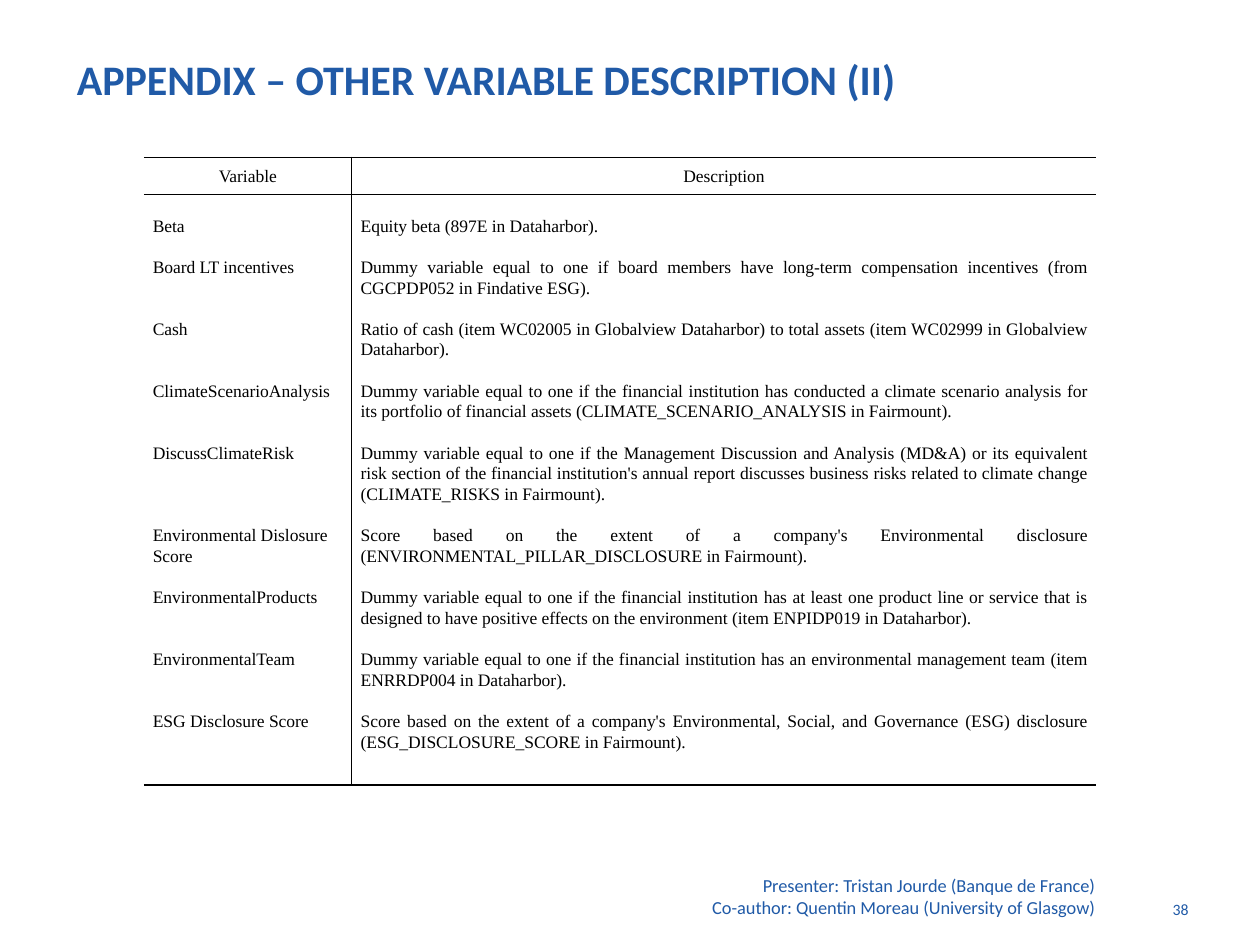
"""Build the appendix slide that describes the remaining variables."""
from lxml import etree
from pptx import Presentation
from pptx.dml.color import RGBColor
from pptx.enum.text import MSO_ANCHOR, PP_ALIGN
from pptx.oxml.ns import qn
from pptx.util import Cm, Pt

LEFT, CENTER, RIGHT, JUSTIFY = PP_ALIGN.LEFT, PP_ALIGN.CENTER, PP_ALIGN.RIGHT, PP_ALIGN.JUSTIFY
TOP, MIDDLE = MSO_ANCHOR.TOP, MSO_ANCHOR.MIDDLE
BLUE, BLACK = "205AA7", "000000"
LINE = 11.8

# name, lines of the name, description, lines of the description
VARIABLES = [
    ("Beta", 1, "Equity beta (897E in Dataharbor).", 1),
    ("Board LT incentives", 1,
     "Dummy variable equal to one if board members have long-term compensation incentives "
     "(from CGCPDP052 in Findative ESG).", 2),
    ("Cash", 1,
     "Ratio of cash (item WC02005 in Globalview Dataharbor) to total assets "
     "(item WC02999 in Globalview Dataharbor).", 2),
    ("ClimateScenarioAnalysis", 1,
     "Dummy variable equal to one if the financial institution has conducted a climate scenario "
     "analysis for its portfolio of financial assets (CLIMATE_SCENARIO_ANALYSIS in Fairmount).", 2),
    ("DiscussClimateRisk", 1,
     "Dummy variable equal to one if the Management Discussion and Analysis (MD&A) or its "
     "equivalent risk section of the financial institution's annual report discusses business "
     "risks related to climate change (CLIMATE_RISKS in Fairmount).", 3),
    ("Environmental Dislosure Score", 2,
     "Score based on the extent of a company's Environmental disclosure "
     "(ENVIRONMENTAL_PILLAR_DISCLOSURE in Fairmount).", 2),
    ("EnvironmentalProducts", 1,
     "Dummy variable equal to one if the financial institution has at least one product line or "
     "service that is designed to have positive effects on the environment "
     "(item ENPIDP019 in Dataharbor).", 2),
    ("EnvironmentalTeam", 1,
     "Dummy variable equal to one if the financial institution has an environmental management "
     "team (item ENRRDP004 in Dataharbor).", 2),
    ("ESG Disclosure Score", 1,
     "Score based on the extent of a company's Environmental, Social, and Governance (ESG) "
     "disclosure (ESG_DISCLOSURE_SCORE in Fairmount).", 2),
]


def rgb(color):
    return RGBColor.from_string(color)


def add_text(tf, text, size=10, font="Times New Roman", color=BLACK, bold=False,
             align=LEFT, spacing=1.07, before=0):
    p = tf.paragraphs[0] if not tf.text else tf.add_paragraph()
    p.alignment = align
    p.line_spacing = spacing
    p.space_before = Pt(before)
    r = p.add_run()
    r.text = text
    r.font.size = Pt(size)
    r.font.name = font
    r.font.bold = bold
    r.font.color.rgb = rgb(color)


prs = Presentation()
prs.slide_width, prs.slide_height = Cm(25.4), Cm(19.05)
s = prs.slides.add_slide(prs.slide_layouts[6])

boxes = [
    ((1.3, 0, 22.86, 3.18), ["APPENDIX – OTHER VARIABLE DESCRIPTION (II)"], 24, True, LEFT, MIDDLE),
    ((22.71, 18.01, 1.5, 0.99), ["38"], 9, False, RIGHT, TOP),
    ((8.51, 17.5, 13.82, 0.99),
     ["Presenter: Tristan Jourde (Banque de France)",
      "Co-author: Quentin Moreau (University of Glasgow)"], 10.5, False, RIGHT, TOP),
]
for place, lines, size, bold, align, anchor in boxes:
    tf = s.shapes.add_textbox(*map(Cm, place)).text_frame
    tf.word_wrap = True
    tf.vertical_anchor = anchor
    for text in lines:
        add_text(tf, text, size=size, font="Calibri", color=BLUE, bold=bold,
                 align=align, spacing=1)

table = s.shapes.add_table(2, 2, Cm(2.9), Cm(3.17), Cm(19.2), Cm(11.98)).table
table.first_row = table.horz_banding = False
for col, width in zip(table.columns, (4.19, 15.01)):
    col.width = Cm(width)
for row, height in zip(table.rows, (0.75, 11.23)):
    row.height = Cm(height)

for i, row in enumerate(table.rows):
    for j, cell in enumerate(row.cells):
        cell.fill.background()
        cell.margin_left = cell.margin_right = Cm(0.18)
        cell.margin_top = Cm(0.42 if i else 0)
        cell.margin_bottom = 0
        cell.vertical_anchor = TOP if i else MIDDLE
        inner = "lnL" if j else "lnR"
        tcPr = cell._tc.get_or_add_tcPr()
        for k, side in enumerate(("lnL", "lnR", "lnT", "lnB")):
            ln = etree.Element(qn("a:" + side), w=str(Pt(1)))
            tcPr.insert(k, ln)
            if side in (inner, "lnT", "lnB"):
                fill = etree.SubElement(ln, qn("a:solidFill"))
                etree.SubElement(fill, qn("a:srgbClr"), val=BLACK)
            else:
                etree.SubElement(ln, qn("a:noFill"))

for j, text in enumerate(("Variable", "Description")):
    add_text(table.cell(0, j).text_frame, text, align=CENTER)

names, descriptions = (table.cell(1, j).text_frame for j in range(2))
name_gap = description_gap = 0
for name, name_lines, description, description_lines in VARIABLES:
    add_text(names, name, before=name_gap)
    add_text(descriptions, description, align=JUSTIFY, before=description_gap)
    name_gap = (description_lines + 1 - name_lines) * LINE
    description_gap = LINE

prs.save("out.pptx")
